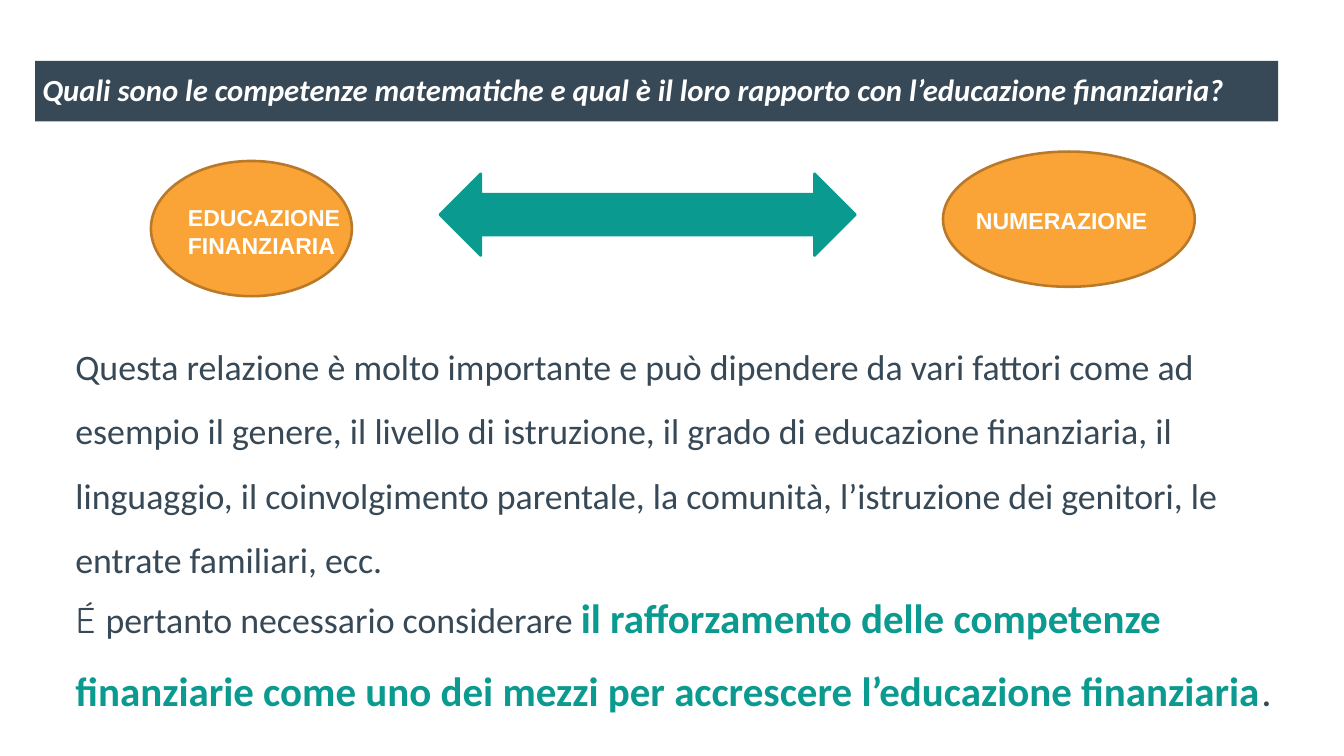
from pptx import Presentation
from pptx.dml.color import RGBColor
from pptx.enum.shapes import MSO_SHAPE
from pptx.enum.text import MSO_ANCHOR, MSO_AUTO_SIZE, PP_ALIGN
from pptx.util import Cm, Pt

PAGE_SIZE = (Pt(1050), Pt(591))

COLORS = {
    "slate": "374856",
    "teal": "0A9A8F",
    "orange": "FAA337",
    "brown": "B97929",
    "white": "FFFFFF",
}

FORMATS = {
    "title": {"name": "Calibri", "size": Pt(24), "bold": True, "italic": True, "color": "white"},
    "label": {"name": "Arial", "size": Pt(18), "bold": True, "color": "white"},
    "accent": {"name": "Quicksand", "size": Pt(28), "color": "slate"},
    "body": {"name": "Calibri", "size": Pt(28), "color": "slate"},
    "key": {"name": "Calibri", "size": Pt(32), "bold": True, "color": "teal"},
    "stop": {"name": "Calibri", "size": Pt(32), "bold": False, "color": "slate"},
}

# Boxes are left, top, width, height in centimetres.
TITLE_BOX = (0.97, 1.68, 34.26, 1.67)
TITLE = [[("Quali sono le competenze matematiche e qual è il loro rapporto "
           "con l’educazione finanziaria?", "title")]]

ARROW_BOX = (12.12, 4.79, 11.46, 2.26)
CONCEPTS = [
    {"ellipse": (4.16, 4.44, 5.54, 3.73), "label": (4.93, 5.5, 4.93, 1.8),
     "lines": ["EDUCAZIONE", "FINANZIARIA"]},
    {"ellipse": (25.99, 4.18, 6.94, 3.73), "label": (26.65, 5.56, 5.28, 1.02),
     "lines": ["NUMERAZIONE"]},
]

BODY_TEXTS = [
    ((1.83, 8.78, 33.4, 7.44), [[
        ("Questa relazione è molto importante e può dipendere da vari fattori come ad "
         "esempio il genere, il livello di istruzione, il grado di educazione finanziaria, "
         "il linguaggio, il coinvolgimento parentale, la comunità, l’istruzione dei "
         "genitori, le entrate familiari, ecc.", "body")]]),
    ((1.83, 15.53, 35.23, 4.37), [[
        ("É ", "accent"),
        ("pertanto necessario considerare ", "body"),
        ("il rafforzamento delle competenze finanziarie come uno dei mezzi per "
         "accrescere l’educazione finanziaria", "key"),
        (".", "stop")]]),
]


def color(name):
    return RGBColor.from_string(COLORS[name])


def write(frame, paragraphs, spacing=1.0):
    """Fill a text frame with paragraphs, each a list of (text, format name)."""
    for index, spans in enumerate(paragraphs):
        para = frame.add_paragraph() if index else frame.paragraphs[0]
        para.alignment = PP_ALIGN.LEFT
        para.line_spacing = spacing
        for text, format_name in spans:
            span = para.add_run()
            span.text = text
            for key, value in FORMATS[format_name].items():
                if key == "color":
                    span.font.color.rgb = color(value)
                else:
                    setattr(span.font, key, value)


def add_shape(page, kind, box, fill, line=None):
    shape = page.shapes.add_shape(kind, *map(Cm, box))
    shape.shadow.inherit = False
    shape.fill.solid()
    shape.fill.fore_color.rgb = color(fill)
    if line:
        shape.line.color.rgb = color(line)
        shape.line.width = Pt(2)
    else:
        shape.line.fill.background()
    return shape


def add_text(page, box, paragraphs, spacing=1.0, wrap=True):
    frame = page.shapes.add_textbox(*map(Cm, box)).text_frame
    frame.word_wrap = wrap
    frame.auto_size = MSO_AUTO_SIZE.SHAPE_TO_FIT_TEXT
    write(frame, paragraphs, spacing)


def main():
    deck = Presentation()
    deck.slide_width, deck.slide_height = PAGE_SIZE
    page = deck.slides.add_slide(deck.slide_layouts[6])

    title = add_shape(page, MSO_SHAPE.RECTANGLE, TITLE_BOX, "slate").text_frame
    title.word_wrap = True
    title.vertical_anchor = MSO_ANCHOR.MIDDLE
    title.margin_left = title.margin_right = Cm(0.2)
    write(title, TITLE, 0.9)

    add_shape(page, MSO_SHAPE.LEFT_RIGHT_ARROW, ARROW_BOX, "teal", "teal")
    for concept in CONCEPTS:
        add_shape(page, MSO_SHAPE.OVAL, concept["ellipse"], "orange", "brown")
        label = [[(line, "label")] for line in concept["lines"]]
        add_text(page, concept["label"], label, wrap=False)

    for box, paragraphs in BODY_TEXTS:
        add_text(page, box, paragraphs, spacing=1.5)

    deck.save("out.pptx")


if __name__ == "__main__":
    main()
